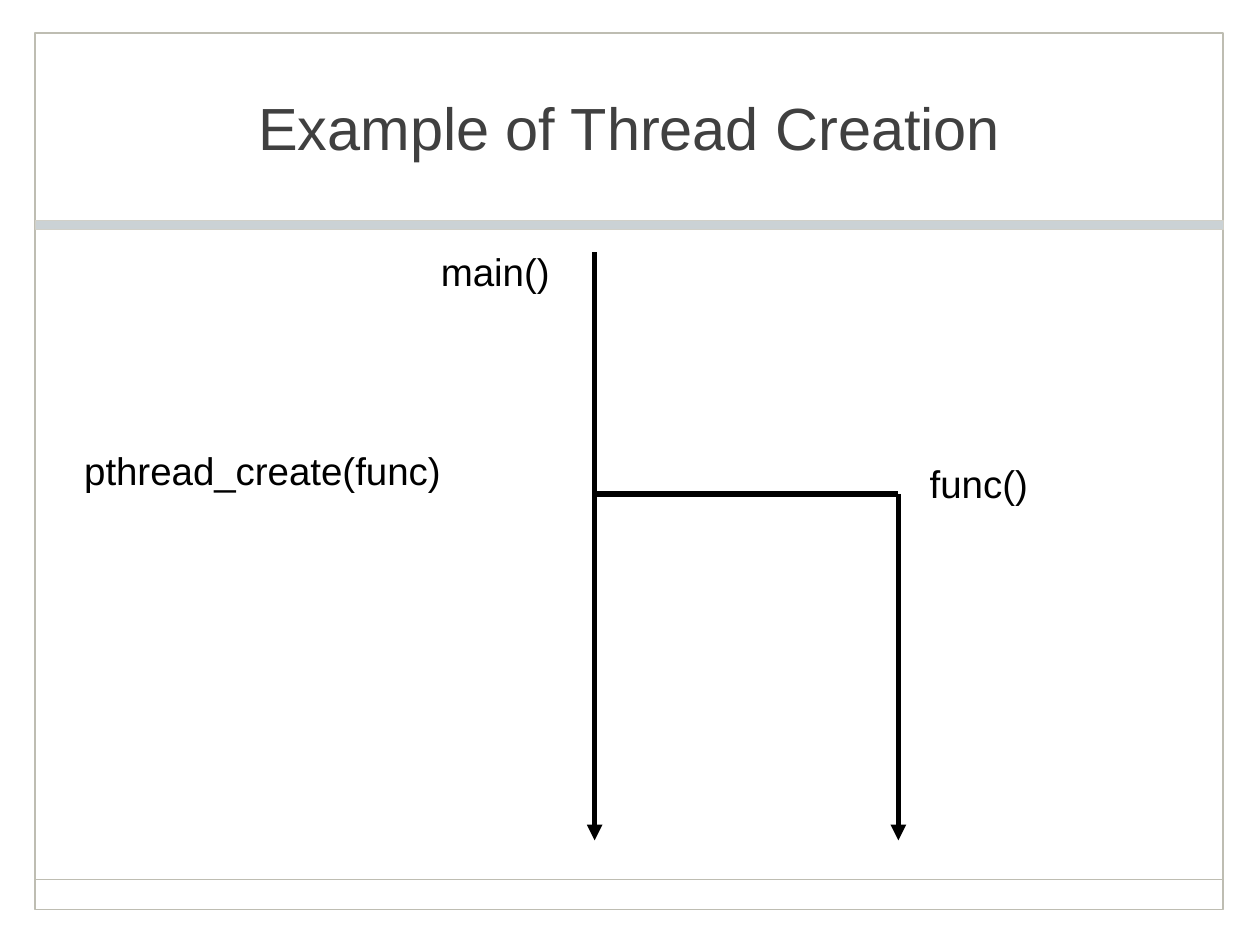
from pptx import Presentation
from pptx.dml.color import RGBColor
from pptx.enum.shapes import MSO_CONNECTOR as Conn, MSO_SHAPE as Shape
from pptx.enum.text import MSO_ANCHOR as Anchor, MSO_AUTO_SIZE as Fit, PP_ALIGN as Align
from pptx.oxml.ns import qn
from pptx.util import Inches, Pt
from lxml.etree import SubElement

FONT = "Arial"
BLACK = "000000"
EDGE = "BEBDB2"
LEFT, RIGHT = 0.28, 9.71
MAIN_X, FUNC_X = 4.72, 7.13
FORK_Y, END_Y = 3.92, 6.67


def paint(color, code):
    color.rgb = RGBColor.from_string(code)


def add_run(para, text, size, code):
    run = para.add_run()
    run.text = text
    run.font.name = FONT
    run.font.size = Pt(size)
    paint(run.font.color, code)


def add_title(slide, text):
    title = slide.shapes.title
    title.left, title.top = Inches(0.98), Inches(0.27)
    title.width, title.height = Inches(8.03), Inches(1.47)
    frame = title.text_frame
    frame.vertical_anchor = Anchor.MIDDLE
    para = frame.paragraphs[0]
    para.alignment = Align.CENTER
    add_run(para, text, 34, "404040")


def add_rect(slide, top, height, edge, width, fill=None):
    rect = slide.shapes.add_shape(Shape.RECTANGLE, Inches(LEFT), Inches(top),
                                  Inches(RIGHT - LEFT), Inches(height))
    rect.shadow.inherit = False
    if fill:
        rect.fill.solid()
        paint(rect.fill.fore_color, fill)
    else:
        rect.fill.background()
    paint(rect.line.color, edge)
    rect.line.width = Pt(width)


def add_line(slide, start, end, code=BLACK, width=3, arrow=False):
    points = [Inches(n) for n in (*start, *end)]
    line = slide.shapes.add_connector(Conn.STRAIGHT, *points)
    paint(line.line.color, code)
    line.line.width = Pt(width)
    if arrow:
        SubElement(line.line._get_or_add_ln(), qn("a:tailEnd"), type="triangle")
    SubElement(line._element.spPr, qn("a:effectLst"))


def add_label(slide, text, left, top, width=1.32, wrap=False):
    box = slide.shapes.add_textbox(Inches(left), Inches(top),
                                   Inches(width), Inches(0.47))
    frame = box.text_frame
    frame.word_wrap = wrap
    frame.auto_size = Fit.SHAPE_TO_FIT_TEXT
    add_run(frame.paragraphs[0], text, 22, BLACK)


def main():
    deck = Presentation()
    deck.slide_width, deck.slide_height = Inches(10), Inches(7.5)
    slide = deck.slides.add_slide(deck.slide_layouts[5])

    add_rect(slide, 0.26, 6.96, EDGE, 1)
    add_line(slide, (LEFT, 6.98), (RIGHT, 6.98), EDGE, 1)
    add_rect(slide, 1.75, 0.07, "D1D0C8", 0.25, "CBD2D5")
    add_title(slide, "Example of Thread Creation")

    add_label(slide, "main()", 3.4, 1.92)
    add_line(slide, (MAIN_X, 2), (MAIN_X, END_Y), arrow=True)
    add_label(slide, "pthread_create(func)", 0.57, 3.5, 4.34, True)
    add_line(slide, (MAIN_X, FORK_Y), (FUNC_X, FORK_Y))
    add_line(slide, (FUNC_X, FORK_Y), (FUNC_X, END_Y), arrow=True)
    add_label(slide, "func()", 7.28, 3.6)

    deck.save("out.pptx")


if __name__ == "__main__":
    main()
